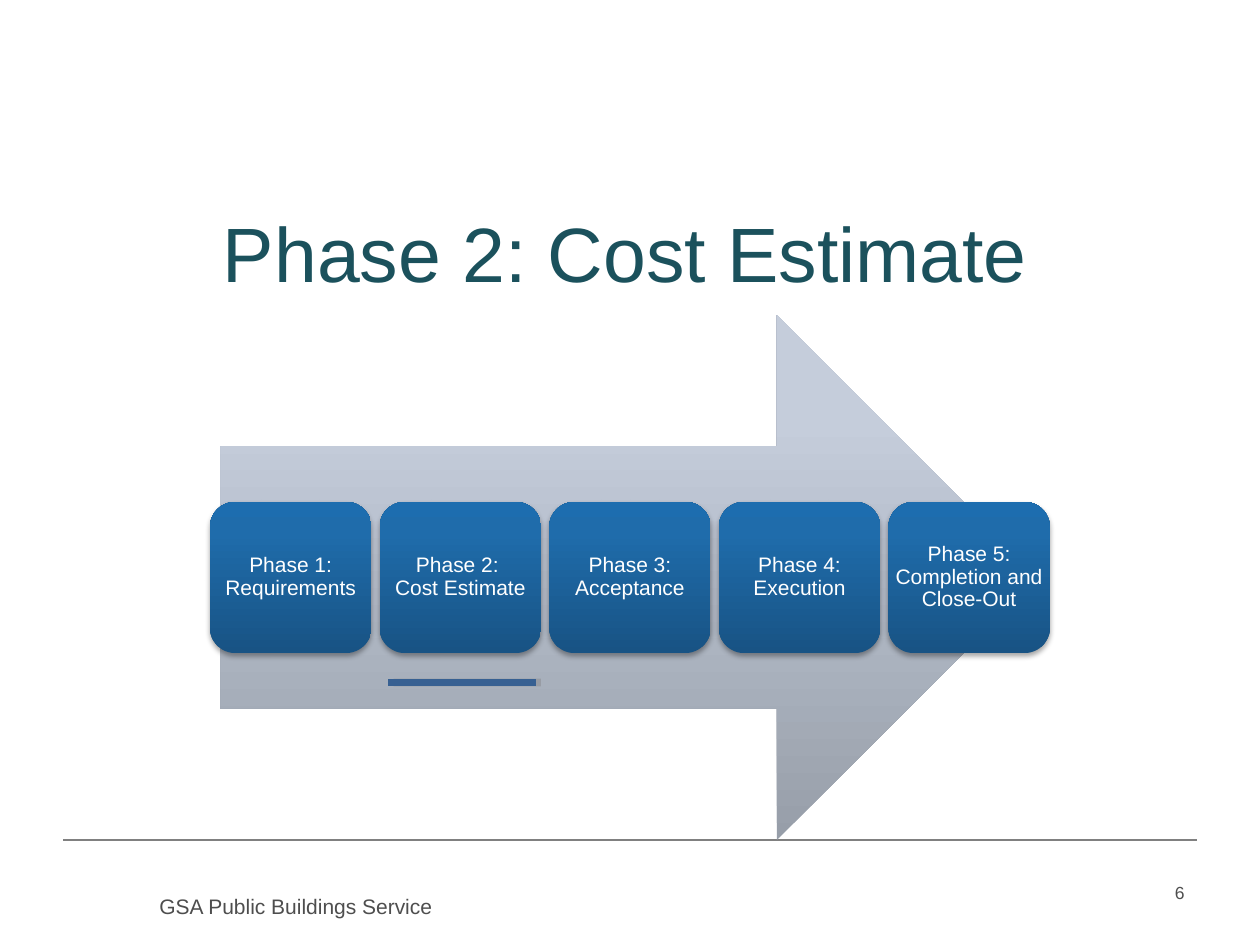
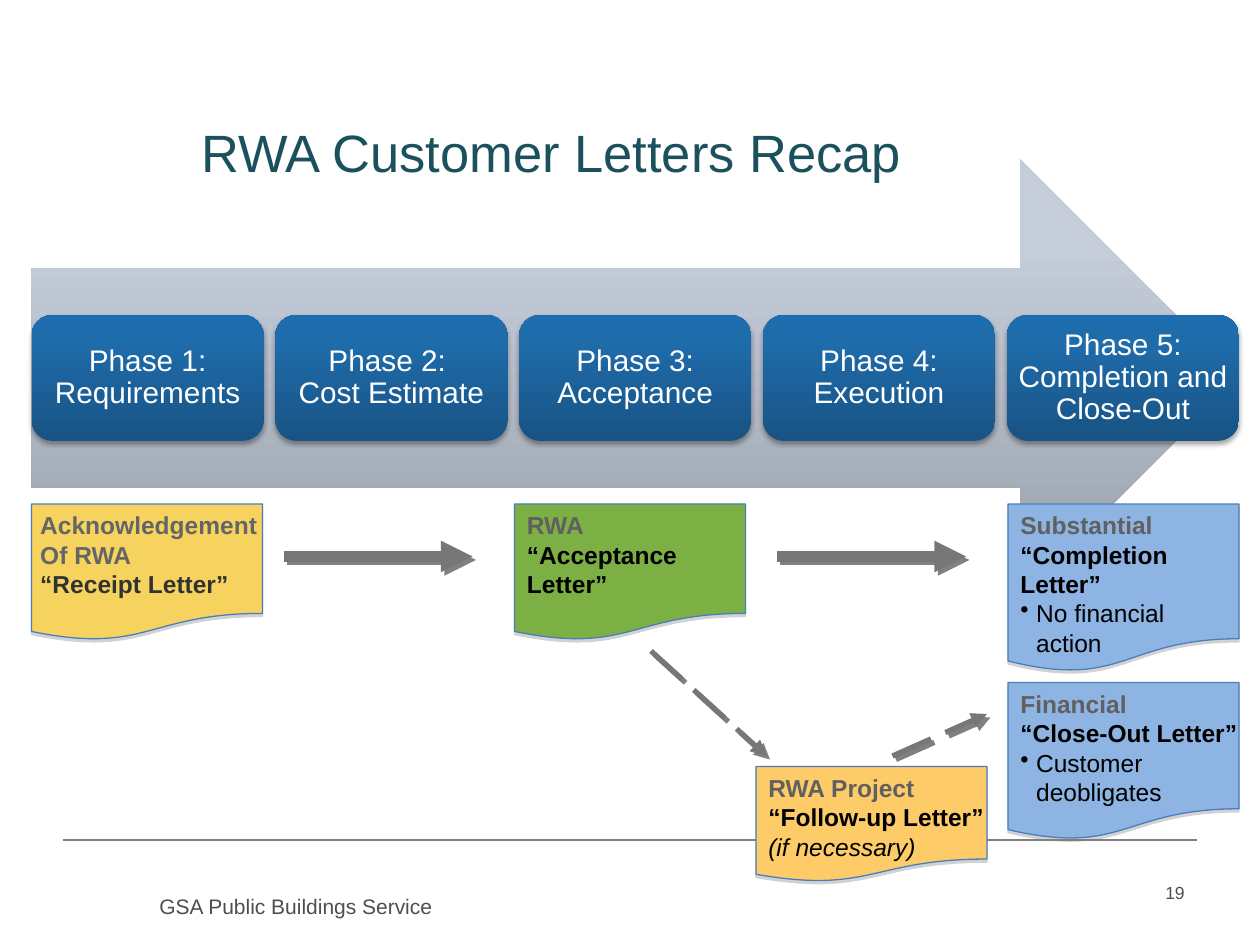
"""Build two slides on the phases and customer letters of an RWA."""
import dataclasses

import lxml.etree
import pptx
import pptx.dml.color
import pptx.enum.dml
import pptx.enum.shapes
import pptx.enum.text
import pptx.oxml.ns
import pptx.util

Pt = pptx.util.Pt
qn = pptx.oxml.ns.qn
SHAPE = pptx.enum.shapes.MSO_SHAPE
ALIGN = pptx.enum.text.PP_ALIGN
ANCHOR = pptx.enum.text.MSO_ANCHOR


@dataclasses.dataclass(frozen=True)
class Theme:
    """Colours, type sizes and shadows (colour, opacity, blur, distance, angle)."""
    font: str = "Arial"
    title: str = "1B515C"
    footer: str = "4E4E4E"
    rule: str = "808080"
    white: str = "FFFFFF"
    black: str = "000000"
    heading: str = "606060"
    receipt_heading: str = "646666"
    receipt_name: str = "313232"
    outline: str = "4A7EBB"
    marker: str = "376092"
    flow: str = "777777"
    receipt: str = "F6D35E"
    acceptance: str = "7CB045"
    completion: str = "8EB4E3"
    follow_up: str = "FDCC68"
    arrow_gradient: tuple = ((0, "979EA9"), (80, "C5CDDB"), (100, "C5CEDC"))
    phase_gradient: tuple = ((0, "185384"), (80, "1F6CAB"), (100, "1D6DAF"))
    phase_shadow: tuple = ("000000", 35, 3.1, 1.8, 90)
    letter_shadow: tuple = ("808080", 35, 0, 1.8, 90)
    flow_shadow: tuple = ("808080", 100, 0, 2.8, 45)
    marker_shadow: tuple = ("808080", 40, 0, 3, 0)
    section_size: int = 44
    title_size: int = 30
    letter_size: int = 14
    footer_size: int = 12
    number_size: int = 10


THEME = Theme()
PHASES = (
    "Phase 1: Requirements",
    "Phase 2: \nCost Estimate",
    "Phase 3: Acceptance",
    "Phase 4: Execution",
    "Phase 5: Completion and Close-Out",
)


@dataclasses.dataclass(frozen=True)
class Box:
    """A rectangle in points."""
    left: float
    top: float
    width: float
    height: float

    def lengths(self):
        """Return the four lengths for python-pptx."""
        return [Pt(value) for value in dataclasses.astuple(self)]


@dataclasses.dataclass(frozen=True)
class Run:
    """A stretch of text in one style."""
    text: str
    size: float
    colour: str
    bold: bool = False
    italic: bool = False


@dataclasses.dataclass(frozen=True)
class Line:
    """A paragraph made of runs."""
    runs: tuple
    bullet: bool = False


def rgb(colour):
    """Turn a hex string into a colour."""
    return pptx.dml.color.RGBColor.from_string(colour)


def set_shadow(shape, shadow=None):
    """Give a shape or connector the shadow, or none."""
    effects = lxml.etree.SubElement(shape._element.spPr, qn("a:effectLst"))
    if shadow:
        colour, opacity, blur, distance, angle = shadow
        outer = lxml.etree.SubElement(
            effects, qn("a:outerShdw"), blurRad=str(Pt(blur)),
            dist=str(Pt(distance)), dir=str(angle * 60000), rotWithShape="0")
        tint = lxml.etree.SubElement(outer, qn("a:srgbClr"), val=colour)
        lxml.etree.SubElement(tint, qn("a:alpha"), val=str(opacity * 1000))


def set_gradient(shape, stops):
    """Fill a shape with a gradient that rises from the bottom."""
    shape.fill.gradient()
    shape.fill.gradient_angle = 90
    stop_list = shape._element.spPr.find(".//" + qn("a:gsLst"))
    stop_list.clear()
    for position, colour in stops:
        stop = lxml.etree.SubElement(stop_list, qn("a:gs"), pos=str(position * 1000))
        lxml.etree.SubElement(stop, qn("a:srgbClr"), val=colour)


def add_gradient_shape(slide, kind, box, stops, shadow=None):
    """Draw an unlined gradient shape."""
    shape = slide.shapes.add_shape(kind, *box.lengths())
    set_gradient(shape, stops)
    shape.line.fill.background()
    set_shadow(shape, shadow)


def add_line(slide, start, end, colour, width, shadow=None, arrow=False, dashed=False):
    """Draw a straight line, with an arrowhead or dashes if asked."""
    connector = slide.shapes.add_connector(
        pptx.enum.shapes.MSO_CONNECTOR.STRAIGHT, *map(Pt, start + end))
    connector.line.color.rgb = rgb(colour)
    connector.line.width = Pt(width)
    if dashed:
        connector.line.dash_style = pptx.enum.dml.MSO_LINE.LONG_DASH
    if arrow:
        line = connector._element.spPr.find(qn("a:ln"))
        lxml.etree.SubElement(line, qn("a:tailEnd"), type="triangle")
    set_shadow(connector, shadow)


def set_bullet(paragraph):
    """Hang a paragraph from a round bullet."""
    properties = paragraph._p.get_or_add_pPr()
    properties.set("marL", str(Pt(9)))
    properties.set("indent", str(-Pt(9)))
    lxml.etree.SubElement(properties, qn("a:buChar"), char="•")


def add_run(paragraph, run):
    """Add a run, breaking the line at each newline."""
    for index, part in enumerate(run.text.split("\n")):
        if index:
            paragraph.add_line_break()
        piece = paragraph.add_run()
        piece.text = part
        font = piece.font
        font.name, font.size = THEME.font, Pt(run.size)
        font.bold, font.italic = run.bold, run.italic
        font.color.rgb = rgb(run.colour)


def add_text(slide, box, lines, align=ALIGN.LEFT, anchor=ANCHOR.TOP,
             insets=(7.2, 3.6), spacing=None, wrap=True):
    """Place a text box of paragraphs."""
    frame = slide.shapes.add_textbox(*box.lengths()).text_frame
    frame.word_wrap, frame.vertical_anchor = wrap, anchor
    frame.margin_left = frame.margin_right = Pt(insets[0])
    frame.margin_top = frame.margin_bottom = Pt(insets[1])
    for index, line in enumerate(lines):
        paragraph = frame.add_paragraph() if index else frame.paragraphs[0]
        if line.bullet:
            set_bullet(paragraph)
        paragraph.alignment = align
        if spacing:
            paragraph.line_spacing = spacing
        for run in line.runs:
            add_run(paragraph, run)


def add_footer(slide, box, number):
    """Draw the rule, the service name and the slide number."""
    right = box.left + box.width
    add_line(slide, (box.left, box.top), (right, box.top), THEME.rule, 1)
    add_text(slide, Box(right - 168, box.top + 20.4, 168, 29),
             [Line((Run(number, THEME.number_size, THEME.footer),))], ALIGN.RIGHT)
    add_text(slide, Box(box.left + 48, box.top + 27, 204, 36),
             [Line((Run("GSA Public Buildings Service", THEME.footer_size, THEME.footer),))])


def add_phase_arrow(slide, box, row_width, row_height, size, inset):
    """Draw the big arrow with the row of phases centred on it."""
    add_gradient_shape(slide, SHAPE.RIGHT_ARROW, box, THEME.arrow_gradient)
    count = len(PHASES)
    gap_ratio = 0.05
    width = row_width / (count + (count - 1) * gap_ratio)
    left = box.left + (box.width - row_width) / 2
    top = box.top + (box.height - row_height) / 2
    for index, phase in enumerate(PHASES):
        card = Box(left + index * width * (1 + gap_ratio), top, width, row_height)
        add_gradient_shape(slide, SHAPE.ROUNDED_RECTANGLE, card,
                           THEME.phase_gradient, THEME.phase_shadow)
        add_text(slide, card, [Line((Run(phase, size, THEME.white),))],
                 ALIGN.CENTER, ANCHOR.MIDDLE, (inset, inset), 0.9)


def add_letter(slide, box, fill, lines, text_left=0, text_width=132, inset=7.2):
    """Draw a letter as a document shape with its text."""
    shape = slide.shapes.add_shape(SHAPE.FLOWCHART_DOCUMENT, *box.lengths())
    shape.fill.solid()
    shape.fill.fore_color.rgb = rgb(fill)
    shape.line.color.rgb = rgb(THEME.outline)
    shape.line.width = Pt(0.75)
    set_shadow(shape, THEME.letter_shadow)
    add_text(slide, Box(box.left + text_left, box.top, text_width, box.height),
             lines, insets=(inset, 3.6))


def heading(text, colour=THEME.heading):
    """Return a bold grey run."""
    return Run(text, THEME.letter_size, colour, bold=True)


def name(text, colour=THEME.black):
    """Return a bold run for a letter's name."""
    return Run(text, THEME.letter_size, colour, bold=True)


def note(text, italic=False):
    """Return a plain black run."""
    return Run(text, THEME.letter_size, THEME.black, italic=italic)


def add_letters(slide, box):
    """Place the five letters and the arrows between them."""
    def at(left, top, height):
        return Box(box.left + left, box.top + top, 132, height)

    def flow(start, end, width, dashed=False):
        points = [(box.left + x, box.top + y) for x, y in (start, end)]
        add_line(slide, *points, THEME.flow, width, THEME.flow_shadow, True, dashed)

    for left in (144, 426):
        flow((left, 30), (left + 108, 30), 6)
    flow((354, 84), (420, 144), 3, dashed=True)
    add_letter(slide, at(0, 0, 78), THEME.receipt, [
        Line((heading("Acknowledgement", THEME.receipt_heading),)),
        Line((heading("Of RWA", THEME.receipt_heading),)),
        Line((name("“Receipt Letter”", THEME.receipt_name),)),
    ], text_left=5, text_width=126, inset=0)
    add_letter(slide, at(276, 0, 78), THEME.acceptance, [
        Line((heading("RWA"),)),
        Line((name("“Acceptance Letter”"),)),
    ])
    add_letter(slide, at(558, 0, 96), THEME.completion, [
        Line((heading("Substantial"),)),
        Line((name("“Completion"),)),
        Line((name("Letter”"),)),
        Line((note("No financial\naction"),), bullet=True),
    ])
    add_letter(slide, at(558, 102, 90), THEME.completion, [
        Line((heading("Financial"),)),
        Line((name("“Close-Out Letter”"),)),
        Line((note("Customer deobligates"),), bullet=True),
    ], text_width=144)
    add_letter(slide, at(414, 150, 66), THEME.follow_up, [
        Line((heading("RWA Project "), name("“Follow-up Letter”"))),
        Line((note("(if necessary)", italic=True),)),
    ], text_width=138)
    flow((492, 144), (546, 120), 3, dashed=True)


def add_section_slide(slide, box):
    """Fill the slide that opens phase 2."""
    add_footer(slide, Box(box.left + 36, box.top + 480, 648, 60), "6")
    add_phase_arrow(slide, Box(box.left + 126, box.top + 180, 468, 300), 480, 86.4, 12, 3.6)
    add_line(slide, (box.left + 306, box.top + 390), (box.left + 222, box.top + 390),
             THEME.marker, 4.5, THEME.marker_shadow)
    add_text(slide, Box(box.left + 118, box.top + 114, 479, 60),
             [Line((Run("Phase 2: Cost Estimate", THEME.section_size, THEME.title),))],
             ALIGN.CENTER, wrap=False)


def add_recap_slide(slide, box):
    """Fill the slide that sets the letters against the phases."""
    add_footer(slide, Box(box.left + 36, box.top + 480, 648, 60), "19")
    add_text(slide, Box(box.left + 108, box.top + 60, 612, 60),
             [Line((Run("RWA Customer Letters Recap", THEME.title_size, THEME.title),))],
             anchor=ANCHOR.MIDDLE, spacing=0.8)
    add_phase_arrow(slide, Box(box.left + 18, box.top + 91, 690, 250), 690, 72, 17, 5)
    add_letters(slide, Box(box.left + 18, box.top + 288, 690, 216))


def main():
    """Build and save the presentation."""
    presentation = pptx.Presentation()
    page = Box(0, 0, 720, 540)
    presentation.slide_width, presentation.slide_height = Pt(page.width), Pt(page.height)
    for fill_slide in (add_section_slide, add_recap_slide):
        fill_slide(presentation.slides.add_slide(presentation.slide_layouts[6]), page)
    presentation.save("out.pptx")


if __name__ == "__main__":
    main()
